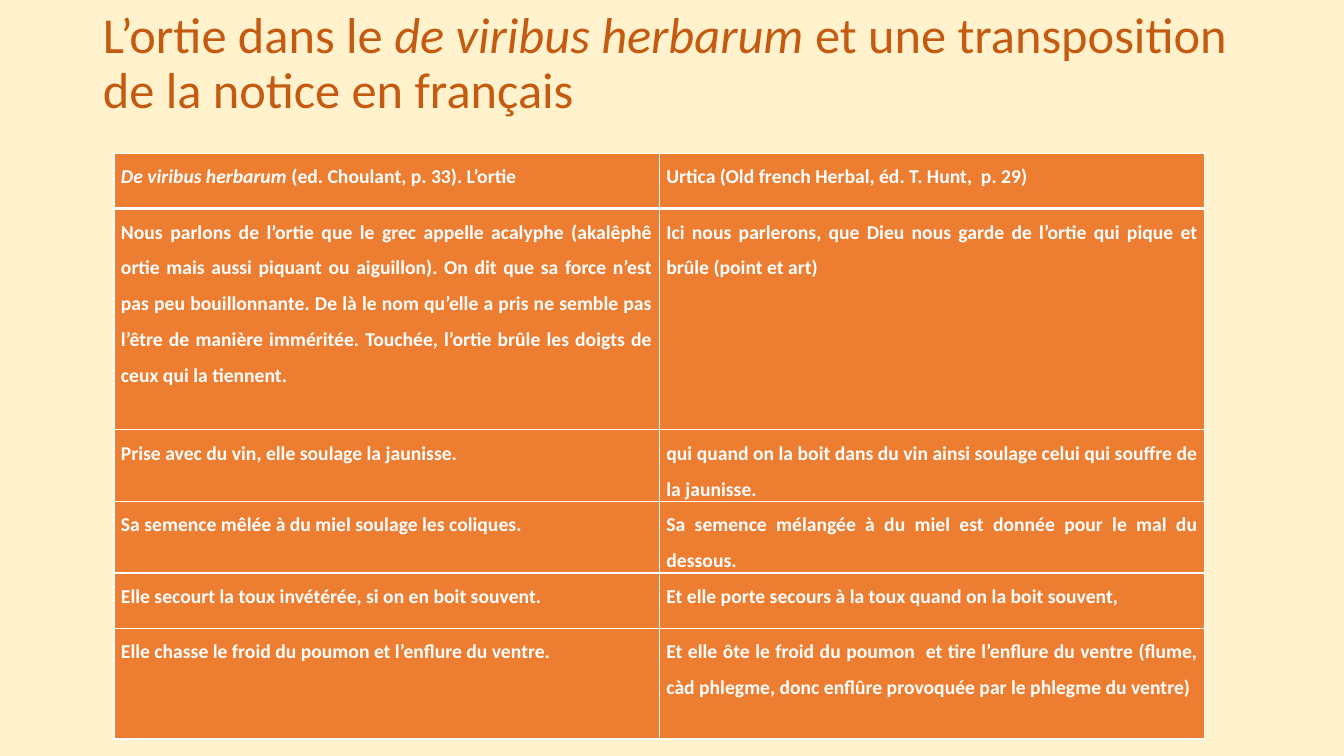
from lxml import etree
from pptx import Presentation
from pptx import util as u
from pptx.dml.color import RGBColor
from pptx.enum import text
from pptx.oxml.ns import qn

COLORS = {"background": "FFF2CC", "title": "C55A11", "cell": "ED7D31", "white": "FFFFFF"}
FONT = "Calibri"
TITLE_BOX = (0.92, 0.25, 11.5, 1.52)
TABLE_BOX = (1.13, 1.52, 10.82, 5.49)
ROW_UNITS = (1, 4, 1, 1, 1, 2)
THIN, THICK = 1, 3

# A cell is a list of (wording, italic) pieces.
TITLE = [("L’ortie dans le ", False), ("de viribus herbarum ", True),
         ("et une transposition de la notice en français", False)]
HEADER = [
    [("De viribus herbarum ", True), ("(ed. Choulant, p. 33). L’ortie", False)],
    [("Urtica (Old french Herbal, éd. T. Hunt,  p. 29)", False)],
]
NOTICES = [
    ("Nous parlons de l’ortie que le grec appelle acalyphe (akalêphê ortie mais "
     "aussi piquant ou aiguillon). On dit que sa force n’est pas peu bouillonnante. "
     "De là le nom qu’elle a pris ne semble pas l’être de manière imméritée. "
     "Touchée, l’ortie brûle les doigts de ceux qui la tiennent.",
     "Ici nous parlerons, que Dieu nous garde de l’ortie qui pique et brûle "
     "(point et art)"),
    ("Prise avec du vin, elle soulage la jaunisse.",
     "qui quand on la boit dans du vin ainsi soulage celui qui souffre de la jaunisse."),
    ("Sa semence mêlée à du miel soulage les coliques.",
     "Sa semence mélangée à du miel est donnée pour le mal du dessous."),
    ("Elle secourt la toux invétérée, si on en boit souvent.",
     "Et elle porte secours à la toux quand on la boit souvent,"),
    ("Elle chasse le froid du poumon et l’enflure du ventre.",
     "Et elle ôte le froid du poumon  et tire l’enflure du ventre (flume, càd "
     "phlegme, donc enflûre provoquée par le phlegme du ventre)"),
]


def rgb(name):
    return RGBColor.from_string(COLORS[name])


def write(paragraph, pieces, color, **formats):
    for wording, italic in pieces:
        run = paragraph.add_run()
        run.text = wording
        run.font.color.rgb = rgb(color)
        for key, value in {"name": FONT, "italic": italic, **formats}.items():
            setattr(run.font, key, value)


def set_borders(cell, widths):
    properties = cell._tc.get_or_add_tcPr()
    for side, width in widths.items():
        line = etree.SubElement(properties, qn(f"a:ln{side}"), w=str(u.Pt(width)))
        fill = etree.SubElement(line, qn("a:solidFill"))
        etree.SubElement(fill, qn("a:srgbClr"), val=COLORS["white"])


def add_title(slide, box):
    title = slide.shapes.title
    title.left, title.top, title.width, title.height = map(u.Inches, box)
    frame = title.text_frame
    for key, value in {"word_wrap": True, "auto_size": text.MSO_AUTO_SIZE.NONE,
                       "vertical_anchor": text.MSO_ANCHOR.MIDDLE}.items():
        setattr(frame, key, value)
    heading = frame.paragraphs[0]
    heading.alignment = text.PP_ALIGN.LEFT
    heading.line_spacing = 0.9
    write(heading, TITLE, "title", size=u.Pt(36))
    heading.add_line_break()


def fill_cell(cell, pieces, row):
    set_borders(cell, {"L": THIN, "R": THIN, "T": THICK if row == 1 else THIN,
                       "B": THICK if row == 0 else THIN})
    cell.fill.solid()
    cell.fill.fore_color.rgb = rgb("cell")
    for side, margin in {"left": 0.07, "right": 0.07, "top": 0, "bottom": 0}.items():
        setattr(cell, f"margin_{side}", u.Inches(margin))
    paragraph = cell.text_frame.paragraphs[0]
    paragraph.alignment = text.PP_ALIGN.JUSTIFY
    paragraph.line_spacing = 1.5
    write(paragraph, pieces, "white", size=u.Pt(14), bold=True)


def add_comparison(slide, box):
    """Set the Latin notice and its French transposition side by side."""
    rows = [HEADER] + [[[(wording, False)] for wording in pair] for pair in NOTICES]
    table = slide.shapes.add_table(len(rows), 2, *map(u.Inches, box)).table
    unit = box[3] / sum(ROW_UNITS)
    for r, (units, pair) in enumerate(zip(ROW_UNITS, rows)):
        table.rows[r].height = u.Inches(units * unit)
        for c, pieces in enumerate(pair):
            fill_cell(table.cell(r, c), pieces, r)


def main():
    deck = Presentation()
    deck.slide_width, deck.slide_height = u.Inches(13.33), u.Inches(7.5)
    slide = deck.slides.add_slide(deck.slide_layouts[5])
    slide.background.fill.solid()
    slide.background.fill.fore_color.rgb = rgb("background")
    add_title(slide, TITLE_BOX)
    add_comparison(slide, TABLE_BOX)
    deck.save("out.pptx")


if __name__ == "__main__":
    main()
